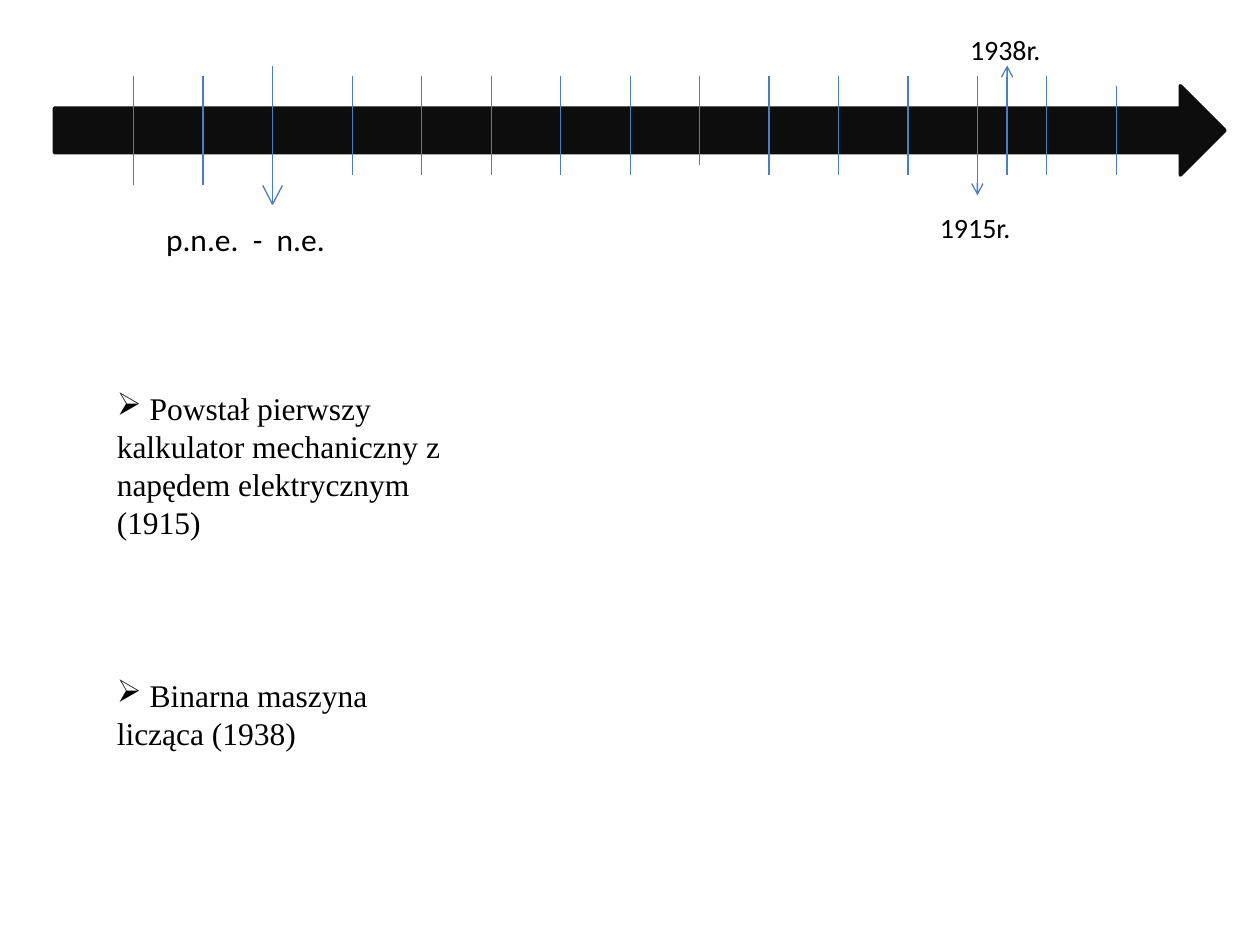
from dataclasses import dataclass

from lxml.etree import SubElement
from pptx import Presentation
from pptx.dml.color import RGBColor as RGB
from pptx.enum.shapes import MSO_CONNECTOR as CONN, MSO_SHAPE as SHAPE
from pptx.enum.text import MSO_AUTO_SIZE as FIT
from pptx.oxml.ns import qn
from pptx.util import Pt


@dataclass(frozen=True)
class Theme:
    bar: RGB = RGB(0x0D, 0x0D, 0x0D)
    tick: RGB = RGB(0x4B, 0x7E, 0xBC)
    text: RGB = RGB(0, 0, 0)
    label_font: str = "Calibri"
    body_font: str = "Times New Roman"
    body_size: int = 18
    year_size: int = 16
    bar_line: float = 2
    tick_line: float = 0.75


class Timeline:
    """Draws timeline elements on one slide in a shared style."""

    def __init__(self, slide, theme):
        self.shapes = slide.shapes
        self.theme = theme

    def bar(self, x, y, w, h):
        sp = self.shapes.add_shape(SHAPE.RIGHT_ARROW, Pt(x), Pt(y), Pt(w), Pt(h))
        sp.shadow.inherit = False
        sp.fill.solid()
        sp.fill.fore_color.rgb = self.theme.bar
        sp.line.color.rgb = self.theme.bar
        sp.line.width = Pt(self.theme.bar_line)

    def line(self, x1, y1, x2, y2, arrow=False):
        cxn = self.shapes.add_connector(CONN.STRAIGHT, Pt(x1), Pt(y1), Pt(x2), Pt(y2))
        cxn.line.color.rgb = self.theme.tick
        cxn.line.width = Pt(self.theme.tick_line)
        if arrow:
            SubElement(cxn.line._get_or_add_ln(), qn("a:tailEnd"), type="arrow")
        SubElement(cxn._element.spPr, qn("a:effectLst"))

    def text(self, text, x, y, w, h, size, font, bullet=None):
        tf = self.shapes.add_textbox(Pt(x), Pt(y), Pt(w), Pt(h)).text_frame
        tf.word_wrap = True
        tf.auto_size = FIT.SHAPE_TO_FIT_TEXT
        p = tf.paragraphs[0]
        p.text = text
        if bullet:
            SubElement(p._p.get_or_add_pPr(), qn("a:buChar"), char=bullet)
        p.font.size = Pt(size)
        p.font.name = font
        p.font.color.rgb = self.theme.text

    def label(self, text, x, y, w, h, size):
        self.text(text, x, y, w, h, size, self.theme.label_font)

    def event(self, text, y, w, h):
        self.text(" " + text, 59.7, y, w, h, self.theme.body_size,
                  self.theme.body_font, "➢")


def main():
    prs = Presentation()
    prs.slide_width, prs.slide_height = Pt(720), Pt(540)
    theme = Theme()
    s = Timeline(prs.slides.add_slide(prs.slide_layouts[6]), theme)

    s.bar(31, 49, 669, 51)

    step, top, bottom = 39.68, 43.4, 100
    bce_x, ce_x = 76.4, 201.4
    for i in range(2):
        x = bce_x + i * step
        s.line(x, top, x, 106)
    short_tick, last_tick = 5, 11
    for i in range(last_tick + 1):
        x = ce_x + i * step
        s.line(x, 49 if i == last_tick else top, x, 94.4 if i == short_tick else bottom)

    era_x, era_tip = bce_x + 2 * step, 116.8
    s.line(era_x, 37.7, era_x, era_tip)
    s.label("p.n.e.  -  n.e.", 87.8, 122.4, 130.3, 29, theme.body_size)
    for dx in (5.6, -5.6):
        s.line(era_x, era_tip, era_x + dx, 106)

    x_1915, x_1938 = ce_x + 9 * step, 575.5
    s.line(x_1915, 54.7, x_1915, 111.6, arrow=True)
    s.line(x_1938, bottom, x_1938, 37.4, arrow=True)
    s.label("1915r.", 530, 116.8, 62.6, 26.6, theme.year_size)
    s.label("1938r.", 547.2, 15, 57, 26.6, theme.year_size)

    s.event("Powstał pierwszy kalkulator mechaniczny z napędem elektrycznym (1915)",
            219, 225.4, 94.3)
    s.event("Binarna maszyna licząca (1938)", 383, 175.7, 51)

    prs.save("out.pptx")


if __name__ == "__main__":
    main()
